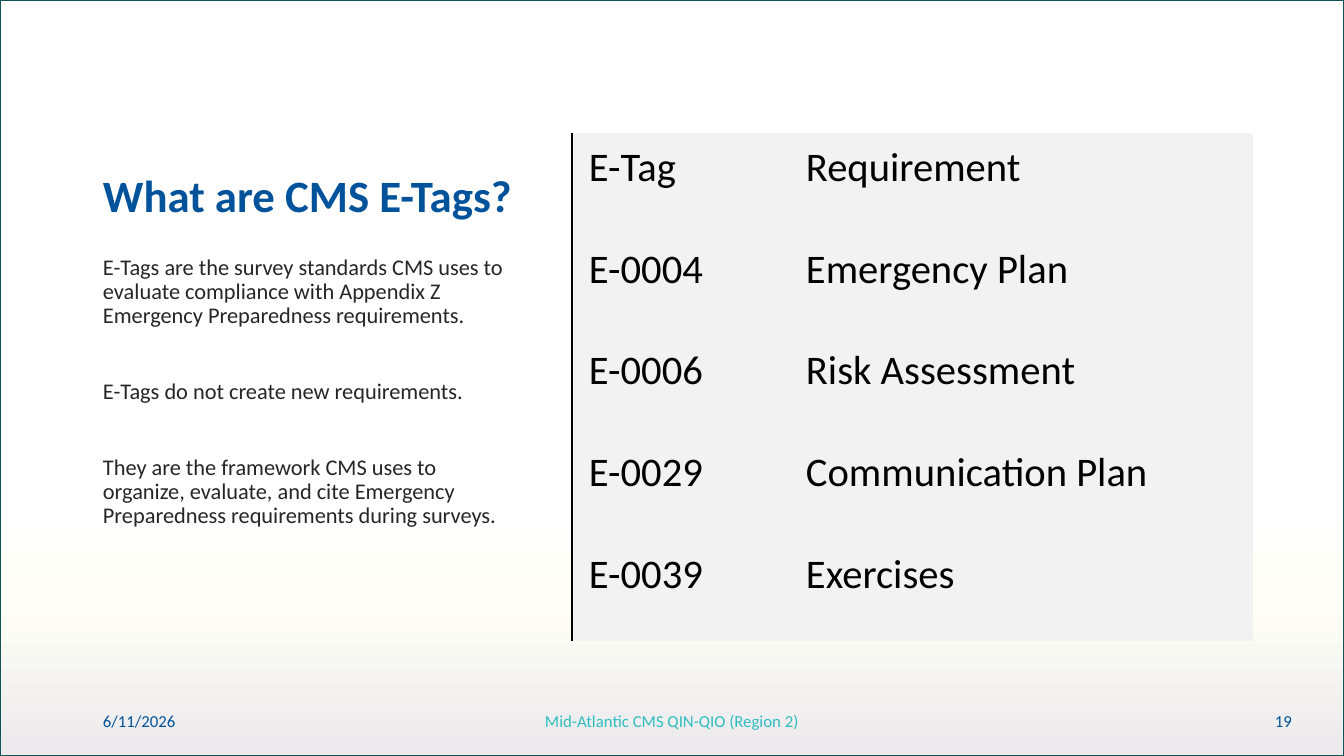
from copy import deepcopy

from pptx import Presentation
from pptx.dml.color import RGBColor
from pptx.enum.shapes import MSO_SHAPE
from pptx.enum.text import MSO_ANCHOR, PP_ALIGN
from pptx.oxml import parse_xml
from pptx.oxml.ns import nsdecls, qn
from pptx.util import Pt

RECTANGLE = MSO_SHAPE.RECTANGLE
TOP, MIDDLE, BOTTOM = MSO_ANCHOR.TOP, MSO_ANCHOR.MIDDLE, MSO_ANCHOR.BOTTOM
LEFT, CENTER, RIGHT = PP_ALIGN.LEFT, PP_ALIGN.CENTER, PP_ALIGN.RIGHT

WIDTH, HEIGHT = 1344, 756
MARGIN, INTRO_WIDTH = 93, 433
FOOTER_TOP, FOOTER_HEIGHT = 701, 40
BLUE, TEAL, DARK, BLACK = "00539B", "2EBDC0", "262626", "000000"

BACKDROP = [(0.66, "FFFFFF"), (0.80, "FFFFF7"), (0.99, "ECEAEC")]
EXPLANATION = [
    "E-Tags are the survey standards CMS uses to evaluate compliance with "
    "Appendix Z Emergency Preparedness requirements.",
    "E-Tags do not create new requirements.",
    "They are the framework CMS uses to organize, evaluate, and cite "
    "Emergency Preparedness requirements during surveys.",
]
REQUIREMENTS = [
    ("E-Tag", "Requirement"),
    ("E-0004", "Emergency Plan"),
    ("E-0006", "Risk Assessment"),
    ("E-0029", "Communication Plan"),
    ("E-0039", "Exercises"),
]
FOOTERS = [
    (MARGIN, 186, "6/11/2026", BLUE, LEFT),
    (445, 454, "Mid-Atlantic CMS QIN-QIO (Region 2)", TEAL, CENTER),
    (1000, 302, "19", BLUE, RIGHT),
]


def px(length):
    return round(length * 914400 / 100.8)


def color(value):
    return RGBColor.from_string(value)


def apply(target, values):
    for name, value in values.items():
        setattr(target, name, value)


class SlideBuilder:
    """Draws styled elements on the current slide."""

    font = "Calibri"

    def __init__(self, deck):
        self.slide = deck.slides.add_slide(deck.slide_layouts[6])

    def typeset(self, frame, paragraphs, size, ink, bold=False, gap=0, **layout):
        for index, words in enumerate(paragraphs):
            paragraph = frame.paragraphs[0] if index == 0 else frame.add_paragraph()
            paragraph.text = words
            apply(paragraph, layout)
            if index:
                paragraph.space_before = Pt(gap)
            apply(paragraph.font, {"name": self.font, "size": Pt(size), "bold": bold})
            paragraph.font.color.rgb = color(ink)

    def text(self, box, paragraphs, size, ink, anchor=TOP, **layout):
        frame = self.slide.shapes.add_textbox(*map(px, box)).text_frame
        apply(frame, {
            "word_wrap": True, "vertical_anchor": anchor,
            "margin_left": px(10), "margin_right": px(10),
            "margin_top": px(5), "margin_bottom": px(5),
        })
        self.typeset(frame, paragraphs, size, ink, **layout)

    def backdrop(self, box, stops, outline, weight):
        panel = self.slide.shapes.add_shape(RECTANGLE, *map(px, box))
        panel.shadow.inherit = False
        panel.fill.gradient()
        panel.fill.gradient_angle = 270
        stop_list = next(panel.element.iter(qn("a:gsLst")))
        stop_list.append(deepcopy(stop_list[-1]))
        for stop, (position, shade) in zip(panel.fill.gradient_stops, stops):
            stop.position = position
            stop.color.rgb = color(shade)
        panel.line.color.rgb = color(outline)
        panel.line.width = Pt(weight)

    def border(self, cell, side, ink=None):
        paint = (f'<a:solidFill><a:srgbClr val="{ink}"/></a:solidFill>'
                 if ink else "<a:noFill/>")
        cell._tc.get_or_add_tcPr().append(parse_xml(
            f'<a:ln{side} {nsdecls("a")} w="{Pt(1)}">{paint}</a:ln{side}>'))

    def table(self, box, rows, widths, size, ink, shade):
        grid = self.slide.shapes.add_table(
            len(rows), len(widths), *map(px, box)).table
        apply(grid, {"first_row": False, "horz_banding": False})
        for column, width in zip(grid.columns, widths):
            column.width = px(width)
        for row, entries in zip(grid.rows, rows):
            for index, (cell, entry) in enumerate(zip(row.cells, entries)):
                apply(cell, {
                    "vertical_anchor": MIDDLE,
                    "margin_left": px(17), "margin_top": px(5),
                    "margin_right": px(37), "margin_bottom": px(37),
                })
                for side in "LRTB":
                    self.border(cell, side, ink if side == "L" and index == 0 else None)
                cell.fill.solid()
                cell.fill.fore_color.rgb = color(shade)
                self.typeset(cell.text_frame, [entry], size, ink)


def main():
    deck = Presentation()
    apply(deck, {"slide_width": px(WIDTH), "slide_height": px(HEIGHT)})
    builder = SlideBuilder(deck)
    builder.backdrop((0, 0, WIDTH, HEIGHT), BACKDROP, "145354", 1.5)
    builder.text((MARGIN, 91, INTRO_WIDTH, 136), ["What are CMS E-Tags?"], 32, BLUE,
                 anchor=BOTTOM, bold=True, line_spacing=0.9)
    builder.text((MARGIN, 251, INTRO_WIDTH, 396), EXPLANATION, 16, DARK,
                 gap=37, line_spacing=0.9)
    for left, width, words, ink, alignment in FOOTERS:
        builder.text((left, FOOTER_TOP, width, FOOTER_HEIGHT), [words], 12, ink,
                     anchor=MIDDLE, alignment=alignment, space_after=Pt(6))
    builder.table((572, 133, 681, 508), REQUIREMENTS, (217, 464), 29, BLACK, "F2F2F2")
    deck.save("out.pptx")


if __name__ == "__main__":
    main()
